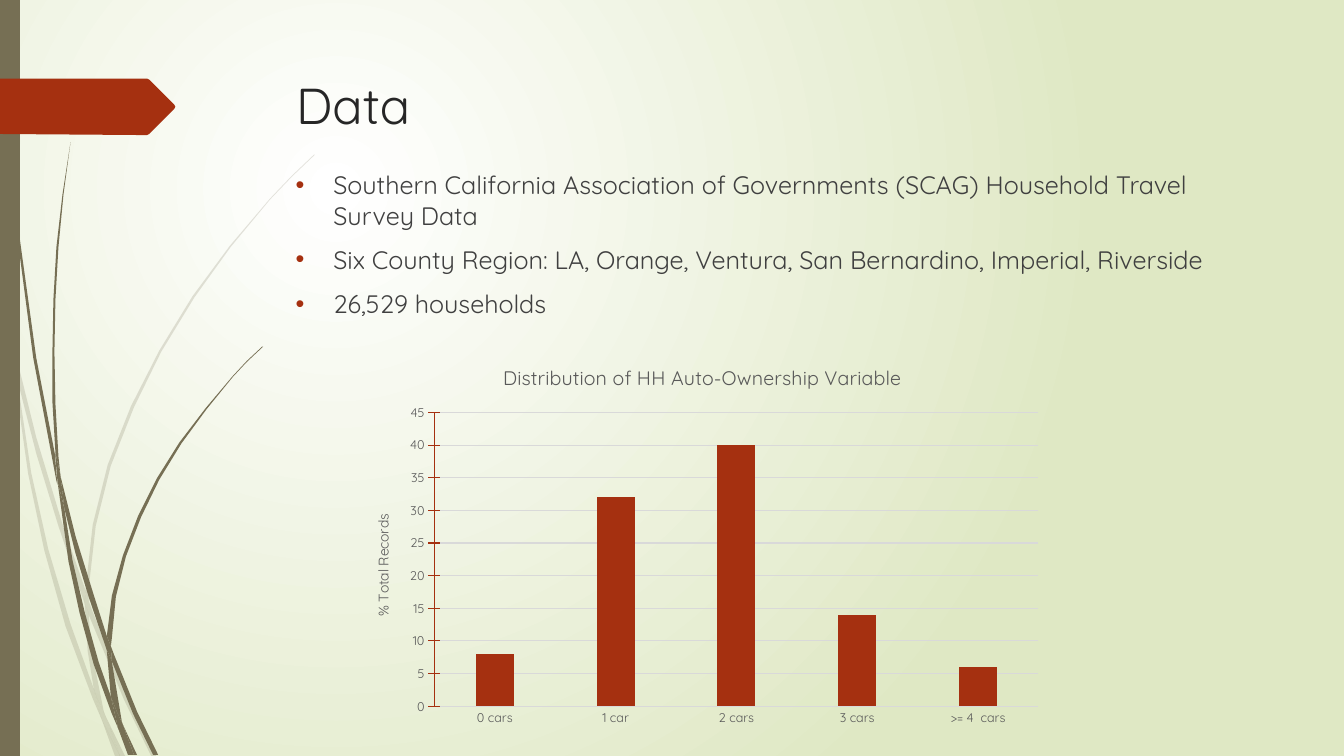
import dataclasses

import lxml.etree
import pptx
import pptx.chart.data
import pptx.dml.color
import pptx.enum.chart
import pptx.enum.shapes
import pptx.enum.text
import pptx.oxml.ns
import pptx.util

Cm = pptx.util.Cm
Pt = pptx.util.Pt
qn = pptx.oxml.ns.qn


@dataclasses.dataclass(frozen=True)
class Theme:
    font: str = "Quicksand"
    accent: str = "A53010"
    stalk: str = "766F54"
    title: str = "262626"
    body: str = "404040"
    muted: str = "595959"
    grid: str = "D9D9D9"
    glow: str = "FFFFFF"
    backdrop: str = "DFE8C4"
    title_size: int = 36
    body_size: int = 18
    chart_title_size: int = 14
    axis_title_size: int = 10
    label_size: int = 9


PALE_STALKS = [
    [(0.58, 5.22), (0.84, 5.99), (0.85, 5.86), (0.62, 5.2), (0.36, 4.34), (0.14, 3.45),
     (0.17, 3.76), (0.36, 4.5)],
    [(0.92, 6.07), (0.88, 5.96), (0.88, 6.1), (1.23, 6.94), (1.5, 7.5), (1.55, 7.5), (1.27, 6.92)],
    [(1.19, 7.5), (1.24, 7.5), (1.05, 7.11)],
    [(0.93, 6.83), (0.7, 6.19), (0.48, 5.45), (0.31, 4.69), (0.17, 3.76), (0.11, 3.5),
     (0.28, 4.7), (0.44, 5.46), (0.65, 6.21), (0.92, 6.93), (1.01, 7.14), (0.99, 7.07)],
    [(0.84, 5.99), (0.87, 6.46), (0.93, 6.83), (0.96, 6.92), (1.05, 7.11), (1.03, 7.06),
     (0.91, 6.46), (0.88, 6.1), (0.88, 6.08)],
    [(0.88, 5.84), (0.95, 5.22), (1.1, 4.62), (1.33, 4.04), (1.6, 3.49), (1.93, 2.95),
     (2.29, 2.45), (2.68, 1.98), (2.9, 1.75), (3.12, 1.54), (3.12, 1.53), (2.89, 1.75),
     (2.68, 1.97), (2.28, 2.44), (1.91, 2.94), (1.58, 3.48), (1.3, 4.03), (1.07, 4.61),
     (0.92, 5.21), (0.85, 5.84), (0.85, 5.86), (0.88, 5.96)],
    [(1.01, 7.14), (1.14, 7.5), (1.19, 7.5)],
    [(0.88, 6.08), (0.88, 6.1), (0.88, 5.96), (0.85, 5.86), (0.84, 5.99)],
    [(0.96, 6.92), (0.93, 6.83), (0.99, 7.07), (1.01, 7.14), (1.19, 7.5), (1.05, 7.11)],
]
DARK_STALKS = [
    [(0.07, 1.1), (0.17, 2.33), (0.33, 3.55), (0.56, 4.77), (0.57, 4.81), (0.55, 4.57),
     (0.55, 4.53), (0.36, 3.55), (0.19, 2.32), (0.08, 1.09), (0.05, 0.48), (0.04, 0),
     (0.03, 0), (0.04, 0.48)],
    [(0.88, 5.92), (1.06, 6.45), (1.06, 6.33), (1.06, 6.31), (0.93, 5.9), (0.75, 5.32),
     (0.6, 4.72), (0.64, 5.05), (0.75, 5.49)],
    [(1.13, 6.49), (1.1, 6.41), (1.11, 6.56), (1.32, 7.08), (1.52, 7.49), (1.57, 7.49), (1.36, 7.06)],
    [(1.1, 6.91), (0.98, 6.57), (0.84, 6.07), (0.72, 5.56), (0.64, 5.05), (0.57, 4.77),
     (0.68, 5.57), (0.79, 6.08), (0.93, 6.59), (1.11, 7.08), (1.17, 7.22), (1.16, 7.17)],
    [(0.6, 4.72), (0.58, 4.53), (0.55, 4.01), (0.54, 3.49), (0.55, 2.97), (0.58, 2.45),
     (0.63, 1.93), (0.7, 1.41), (0.62, 1.93), (0.56, 2.45), (0.53, 2.97), (0.52, 3.49),
     (0.52, 3.99), (0.55, 4.49)],
    [(1.33, 7.49), (1.36, 7.49), (1.22, 7.19)],
    [(0.57, 4.77), (0.64, 5.05), (0.6, 4.72), (0.55, 4.49), (0.55, 4.53)],
    [(1.11, 6.33), (1.15, 5.92), (1.25, 5.52), (1.4, 5.13), (1.58, 4.76), (1.8, 4.4),
     (2.05, 4.06), (2.31, 3.74), (2.45, 3.59), (2.61, 3.44), (2.6, 3.44), (2.45, 3.58),
     (2.31, 3.73), (2.04, 4.05), (1.78, 4.39), (1.56, 4.74), (1.37, 5.12), (1.22, 5.51),
     (1.11, 5.91), (1.06, 6.31), (1.1, 6.41)],
    [(1.17, 7.22), (1.27, 7.49), (1.31, 7.49)],
    [(1.06, 6.45), (1.1, 6.91), (1.16, 7.06), (1.22, 7.19), (1.21, 7.16), (1.11, 6.56), (1.09, 6.51)],
    [(1.06, 6.45), (1.09, 6.51), (1.11, 6.56), (1.1, 6.41), (1.06, 6.31), (1.06, 6.33)],
    [(1.16, 7.06), (1.1, 6.91), (1.16, 7.17), (1.17, 7.22), (1.3, 7.49), (1.33, 7.49), (1.22, 7.19)],
]
ARROW = [(0, 0.78), (1.46, 0.78), (1.48, 0.79), (1.73, 1.04), (1.74, 1.06), (1.73, 1.08),
         (1.48, 1.33), (1.46, 1.34), (1.36, 1.34), (0, 1.33)]
BULLETS = [
    "Southern California Association of Governments (SCAG) Household Travel Survey Data",
    "Six County Region: LA, Orange, Ventura, San Bernardino, Imperial, Riverside",
    "26,529 households",
]
CAR_SHARES = {"0 cars": 8, "1 car": 32, "2 cars": 40, "3 cars": 14, ">= 4  cars": 6}


def rgb(color):
    return pptx.dml.color.RGBColor.from_string(color)


def style_font(font, *, size, color, name):
    font.size, font.name, font.bold = Pt(size), name, False
    font.color.rgb = rgb(color)


def write(para, text, **style):
    span = para.add_run()
    span.text = text
    style_font(span.font, **style)


class SlideBuilder:
    """Draws themed elements on the current slide."""

    def __init__(self, page, theme):
        self.page, self.theme = page, theme

    def font(self, size, color):
        return {"size": size, "color": color, "name": self.theme.font}

    def background(self):
        fill = self.page.background.fill
        fill.gradient()
        for stop, color in zip(fill.gradient_stops, (self.theme.glow, self.theme.backdrop)):
            stop.color.rgb = rgb(color)
        gradient = next(self.page.element.iter(qn("a:gradFill")))
        gradient.remove(gradient.find(qn("a:lin")))
        circle = lxml.etree.SubElement(gradient, qn("a:path"), {"path": "circle"})
        lxml.etree.SubElement(circle, qn("a:fillToRect"),
                              {"l": "50000", "t": "50000", "r": "100000", "b": "100000"})

    def paint(self, shape, color, opacity=100):
        shape.shadow.inherit = False
        shape.fill.solid()
        shape.fill.fore_color.rgb = rgb(color)
        shape.line.fill.background()
        if opacity < 100:
            tint = next(shape.element.spPr.iter(qn("a:srgbClr")))
            lxml.etree.SubElement(tint, qn("a:alpha"), {"val": str(opacity * 1000)})

    def outline(self, shapes, points, color, opacity=100):
        corners = [(Cm(x * 2.54), Cm(y * 2.54)) for x, y in points]
        builder = shapes.build_freeform(*corners[0])
        builder.add_line_segments(corners[1:], close=True)
        self.paint(builder.convert_to_shape(), color, opacity)

    def stalks(self, outlines, opacity=100):
        group = self.page.shapes.add_group_shape()
        for points in outlines:
            self.outline(group.shapes, points, self.theme.stalk, opacity)

    def bar(self, left, top, width, height):
        shape = self.page.shapes.add_shape(pptx.enum.shapes.MSO_SHAPE.RECTANGLE,
                                           Cm(left), Cm(top), Cm(width), Cm(height))
        self.paint(shape, self.theme.stalk)

    def title(self, text, left, top, width, height):
        box = self.page.shapes.title
        box.left, box.top, box.width, box.height = Cm(left), Cm(top), Cm(width), Cm(height)
        frame = box.text_frame
        frame.vertical_anchor = pptx.enum.text.MSO_ANCHOR.TOP
        frame.auto_size = pptx.enum.text.MSO_AUTO_SIZE.NONE
        frame.paragraphs[0].alignment = pptx.enum.text.PP_ALIGN.LEFT
        write(frame.paragraphs[0], text, **self.font(self.theme.title_size, self.theme.title))

    def bullets(self, lines, left, top, width, height):
        frame = self.page.shapes.add_textbox(Cm(left), Cm(top), Cm(width), Cm(height)).text_frame
        frame.word_wrap = True
        for index, text in enumerate(lines):
            para = frame.add_paragraph() if index else frame.paragraphs[0]
            para.space_before = Pt(10)
            properties = para._p.get_or_add_pPr()
            properties.set("marL", str(Cm(0.95)))
            properties.set("indent", str(-Cm(0.95)))
            color = lxml.etree.SubElement(properties, qn("a:buClr"))
            lxml.etree.SubElement(color, qn("a:srgbClr"), {"val": self.theme.accent})
            lxml.etree.SubElement(properties, qn("a:buFont"), {"typeface": "Arial"})
            lxml.etree.SubElement(properties, qn("a:buChar"), {"char": "•"})
            write(para, text, **self.font(self.theme.body_size, self.theme.body))

    def column_chart(self, title, axis_title, shares, left, top, width, height):
        theme, kinds = self.theme, pptx.enum.chart
        data = pptx.chart.data.CategoryChartData()
        data.categories = list(shares)
        data.add_series("Series 1", list(shares.values()))
        chart = self.page.shapes.add_chart(kinds.XL_CHART_TYPE.COLUMN_CLUSTERED, Cm(left), Cm(top),
                                           Cm(width), Cm(height), data).chart
        style_font(chart.font, **self.font(theme.axis_title_size, theme.muted))
        chart.has_legend = False
        write(chart.chart_title.text_frame.paragraphs[0], title,
              **self.font(theme.chart_title_size, theme.muted))
        plot = chart.plots[0]
        plot.gap_width, plot.overlap, plot.vary_by_categories = 219, -27, False
        plot.series[0].format.fill.solid()
        plot.series[0].format.fill.fore_color.rgb = rgb(theme.accent)
        values = chart.value_axis
        values.minimum_scale, values.maximum_scale, values.major_unit = 0, 45, 5
        write(values.axis_title.text_frame.paragraphs[0], axis_title,
              **self.font(theme.axis_title_size, theme.muted))
        for axis, color, tick in ((chart.category_axis, theme.grid, kinds.XL_TICK_MARK.NONE),
                                  (values, theme.accent, kinds.XL_TICK_MARK.CROSS)):
            axis.major_tick_mark, axis.minor_tick_mark = tick, kinds.XL_TICK_MARK.NONE
            style_font(axis.tick_labels.font, **self.font(theme.label_size, theme.muted))
            self.rule(axis.format.line, color)
        self.rule(values.major_gridlines.format.line, theme.grid)

    def rule(self, line, color):
        line.width = Pt(0.75)
        line.color.rgb = rgb(color)


def main():
    deck = pptx.Presentation()
    deck.slide_width, deck.slide_height = Cm(33.87), Cm(19.05)
    theme = Theme()
    page = deck.slides.add_slide(deck.slide_layouts[5])
    builder = SlideBuilder(page, theme)
    builder.background()
    builder.stalks(PALE_STALKS, opacity=20)
    builder.stalks(DARK_STALKS)
    builder.bar(0, 0, 0.5, 19.05)
    builder.outline(page.shapes, ARROW, theme.accent)
    builder.title("Data", 7.21, 1.73, 24.77, 3.56)
    builder.bullets(BULLETS, 7.2, 4.15, 24.77, 5.36)
    builder.column_chart("Distribution of HH Auto-Ownership Variable", "% Total Records",
                         CAR_SHARES, 8.89, 8.74, 17.63, 9.75)
    deck.save("out.pptx")


if __name__ == "__main__":
    main()
